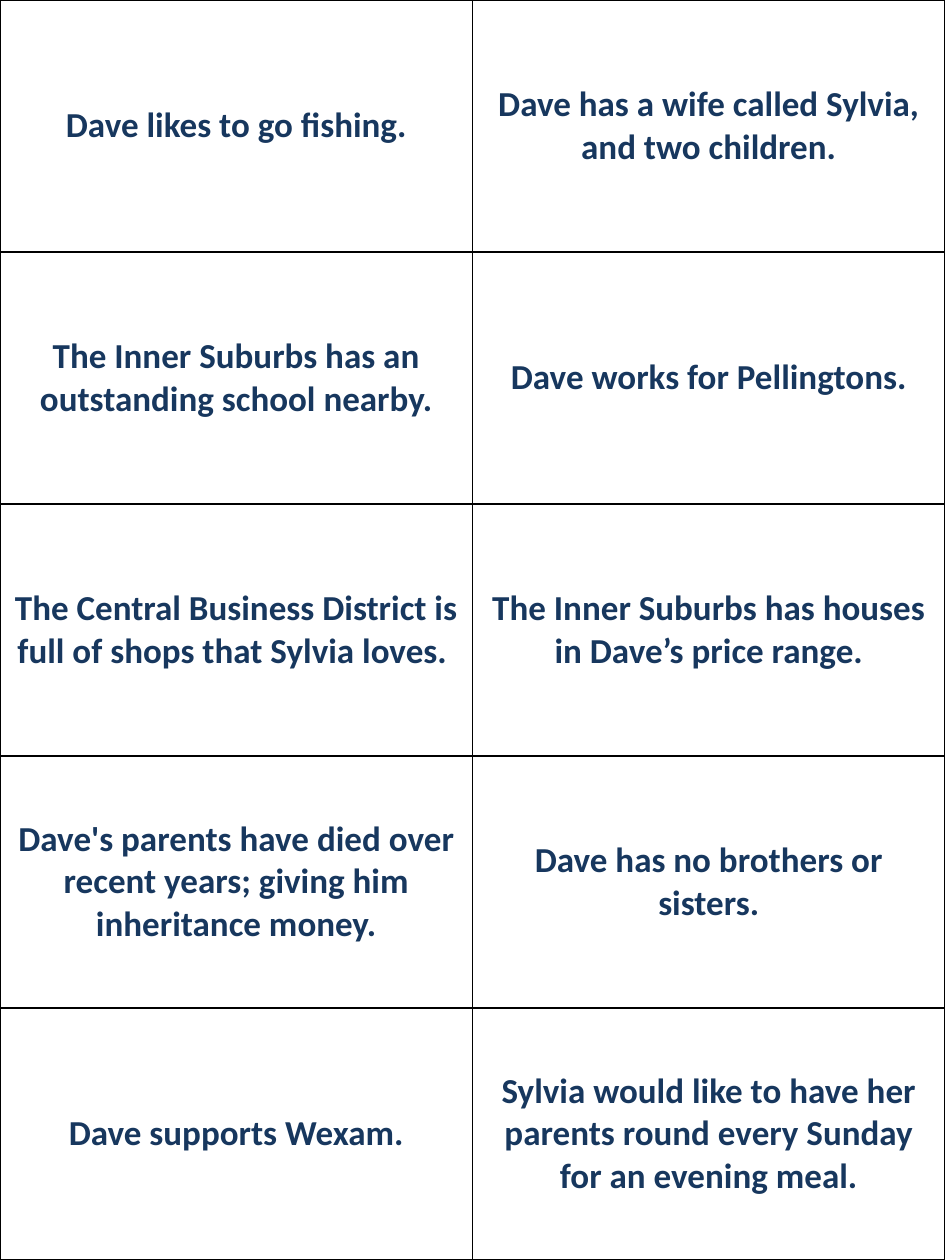
"""Build a page of ten printable statement cards about Dave."""
from lxml.etree import SubElement
from pptx import Presentation
from pptx.dml.color import RGBColor
from pptx.enum.text import MSO_ANCHOR as Anchor, PP_ALIGN as Align
from pptx.oxml.ns import qn
from pptx.util import Cm, Pt

STATEMENTS = [
    ("Dave likes to go fishing.",
     "Dave has a wife called Sylvia, and two children."),
    ("The Inner Suburbs has an outstanding school nearby.",
     "Dave works for Pellingtons."),
    ("The Central Business District is full of shops that Sylvia loves. ",
     "The Inner Suburbs has houses in Dave’s price range."),
    ("Dave's parents have died over recent years; giving him inheritance money.",
     "Dave has no brothers or sisters."),
    ("Dave supports Wexam.",
     "Sylvia would like to have her parents round every Sunday for an evening meal."),
]
PAGE_WIDTH, PAGE_HEIGHT = Cm(19.05), Cm(25.4)
MARGIN = Cm(0.18)
TEXT_COLOUR, BORDER_COLOUR = "17375E", "000000"


def colour(value):
    return RGBColor.from_string(value)


def add_borders(cell):
    properties = cell._tc.get_or_add_tcPr()
    for position, side in enumerate(("a:lnL", "a:lnR", "a:lnT", "a:lnB")):
        line = SubElement(properties, qn(side), w=str(Pt(1)))
        fill = SubElement(line, qn("a:solidFill"))
        SubElement(fill, qn("a:srgbClr"), val=BORDER_COLOUR)
        properties.insert(position, line)


def fill_card(cell, statement):
    cell.text = statement
    cell.vertical_anchor = Anchor.MIDDLE
    cell.margin_left = cell.margin_right = MARGIN
    cell.margin_top = cell.margin_bottom = MARGIN
    cell.fill.background()
    add_borders(cell)
    paragraph = cell.text_frame.paragraphs[0]
    paragraph.alignment = Align.CENTER
    font = paragraph.font
    font.name, font.size, font.bold = "Calibri", Pt(20), True
    font.color.rgb = colour(TEXT_COLOUR)


def main():
    presentation = Presentation()
    presentation.slide_width, presentation.slide_height = PAGE_WIDTH, PAGE_HEIGHT
    slide = presentation.slides.add_slide(presentation.slide_layouts[6])
    cards = slide.shapes.add_table(
        len(STATEMENTS), len(STATEMENTS[0]), 0, 0, PAGE_WIDTH, PAGE_HEIGHT).table
    cards.first_row = cards.horz_banding = False
    for row, statements in enumerate(STATEMENTS):
        for column, statement in enumerate(statements):
            fill_card(cards.cell(row, column), statement)
    presentation.save("out.pptx")


if __name__ == "__main__":
    main()
